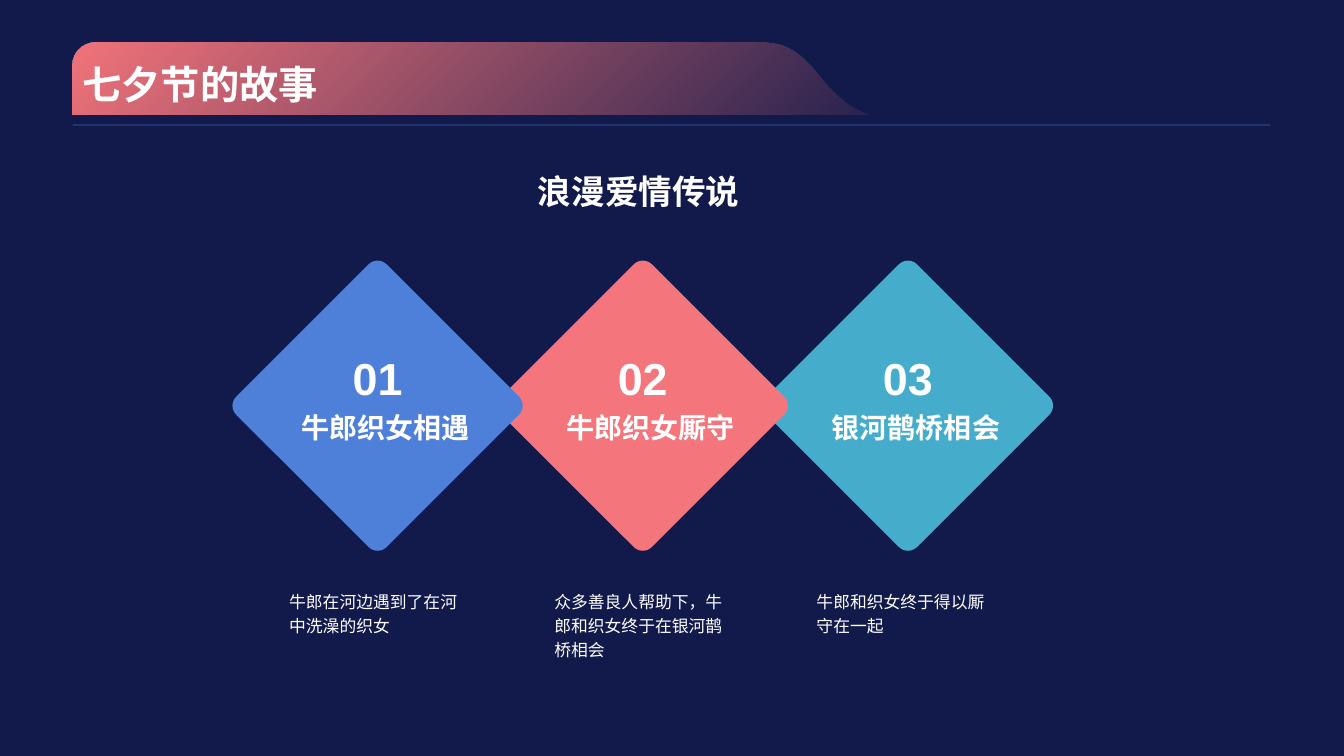
from lxml import etree
from pptx import Presentation
from pptx import util as u
from pptx.dml import color
from pptx.enum import shapes, text
from pptx.oxml import ns

WHITE, NAVY, CORAL, BLUE, TEAL = "FFFFFF", "121A4B", "F4757B", "4E80D9", "45ACCC"
STEP = 2.63
STAGES = [
    ("01", "牛郎织女相遇", "牛郎在河边遇到了在河中洗澡的织女", BLUE, 2.77),
    ("02", "牛郎织女厮守", "众多善良人帮助下，牛郎和织女终于在银河鹊桥相会", CORAL, 5.4),
    ("03", "银河鹊桥相会", "牛郎和织女终于得以厮守在一起", TEAL, 8),
]
BANNER = [
    [(8.63, 1.14), (8.38, 1.07), (8.23, 0.89), (8.05, 0.67)],
    [(8.05, 0.67), (7.86, 0.46), (7.71, 0.42), (7.56, 0.42)],
    [(0.94, 0.42), (0.82, 0.42), (0.72, 0.52), (0.72, 0.65)],
]


def paint(target, tone):
    """Set a colour from a hex string."""
    target.rgb = color.RGBColor.from_string(tone)


def fill(item, tone):
    """Give a shape or background a solid fill."""
    item.fill.solid()
    paint(item.fill.fore_color, tone)


def node(parent, tag, **attrs):
    """Add a drawing element under a parent."""
    return etree.SubElement(parent, ns.qn("a:" + tag), attrs)


def write(box, words, size, bold=True, align=text.PP_ALIGN.CENTER,
          anchor=text.MSO_ANCHOR.TOP, space=None):
    """Fill a box with one styled paragraph."""
    frame = box.text_frame
    frame.word_wrap = True
    frame.auto_size = text.MSO_AUTO_SIZE.NONE
    frame.vertical_anchor = anchor
    frame.text = words
    para = frame.paragraphs[0]
    para.alignment = align
    para.line_spacing = space
    font = para.runs[0].font
    font.name, font.size, font.bold = "Arial", u.Pt(size), bold
    paint(font.color, WHITE)


def label(slide, place, words, size, **style):
    """Add a text box at a place in inches."""
    write(slide.shapes.add_textbox(*map(u.Inches, place)), words, size, **style)


def curve(ends, count=24):
    """Return points along a cubic curve."""
    points = []
    for i in range(count + 1):
        t = i / count
        parts = ((1 - t) ** 3, 3 * t * (1 - t) ** 2, 3 * t * t * (1 - t), t ** 3)
        points.append(tuple(u.Inches(sum(w * p[k] for w, p in zip(parts, ends)))
                            for k in (0, 1)))
    return points


def banner(slide):
    """Draw the fading title banner."""
    points = [p for ends in BANNER for p in curve(ends)]
    points.append((u.Inches(0.72), u.Inches(1.14)))
    path = slide.shapes.build_freeform(*points[0])
    path.add_line_segments(points[1:], close=True)
    shape = path.convert_to_shape()
    shape.shadow.inherit = False
    shape.line.fill.background()
    shape.fill.gradient()
    grad = shape.element.spPr.find(ns.qn("a:gradFill"))
    for child in list(grad):
        grad.remove(child)
    stops = node(grad, "gsLst")
    for pos, alpha in (("0", "100000"), ("100000", "10000")):
        tone = node(node(stops, "gs", pos=pos), "srgbClr", val=CORAL)
        node(tone, "alpha", val=alpha)
    node(grad, "lin", ang="2700000", scaled="0")


def rule(slide):
    """Draw the faint line under the banner."""
    line = slide.shapes.add_connector(shapes.MSO_CONNECTOR.STRAIGHT,
                                      *map(u.Inches, (0.72, 1.24, 12.6, 1.24)))
    paint(line.line.color, BLUE)
    line.line.width = u.Pt(1)
    props = line.element.spPr
    node(next(props.iter(ns.qn("a:srgbClr"))), "alpha", val="40000")
    node(props, "effectLst")


def title(slide, words):
    """Place the title in front of the banner."""
    box = slide.shapes.title
    box.left, box.top, box.width, box.height = map(u.Inches, (0.72, 0, 11.88, 1.12))
    write(box, words, 28, align=text.PP_ALIGN.LEFT, anchor=text.MSO_ANCHOR.BOTTOM)
    box.element.getparent().append(box.element)


def stage(slide, left, num, name, note, tone, edge):
    """Draw one diamond with its number, name and note."""
    gem = slide.shapes.add_shape(shapes.MSO_SHAPE.ROUNDED_RECTANGLE,
                                 *map(u.Inches, (left, 2.97, 2.11, 2.11)))
    gem.adjustments[0] = 0.06
    gem.rotation = 45
    gem.shadow.inherit = False
    gem.line.fill.background()
    fill(gem, tone)
    label(slide, (edge, 5.78, 1.94, 0.89), note, 12, bold=False,
          align=text.PP_ALIGN.LEFT, space=1.2)
    label(slide, (left + 0.19, 3.43, 1.73, 0.7), num, 32)
    label(slide, (left + 0.08, 4.09, 2.11, 0.37), name, 20,
          anchor=text.MSO_ANCHOR.BOTTOM)


def main():
    """Build and save the slide."""
    deck = Presentation()
    deck.slide_width, deck.slide_height = u.Inches(13.33), u.Inches(7.5)
    slide = deck.slides.add_slide(deck.slide_layouts[5])
    fill(slide.background, NAVY)
    banner(slide)
    rule(slide)
    title(slide, "七夕节的故事")
    label(slide, (2.25, 1.65, 8.17, 0.56), "浪漫爱情传说", 24)
    for i, parts in reversed(list(enumerate(STAGES))):
        stage(slide, 2.69 + i * STEP, *parts)
    deck.save("out.pptx")


if __name__ == "__main__":
    main()
